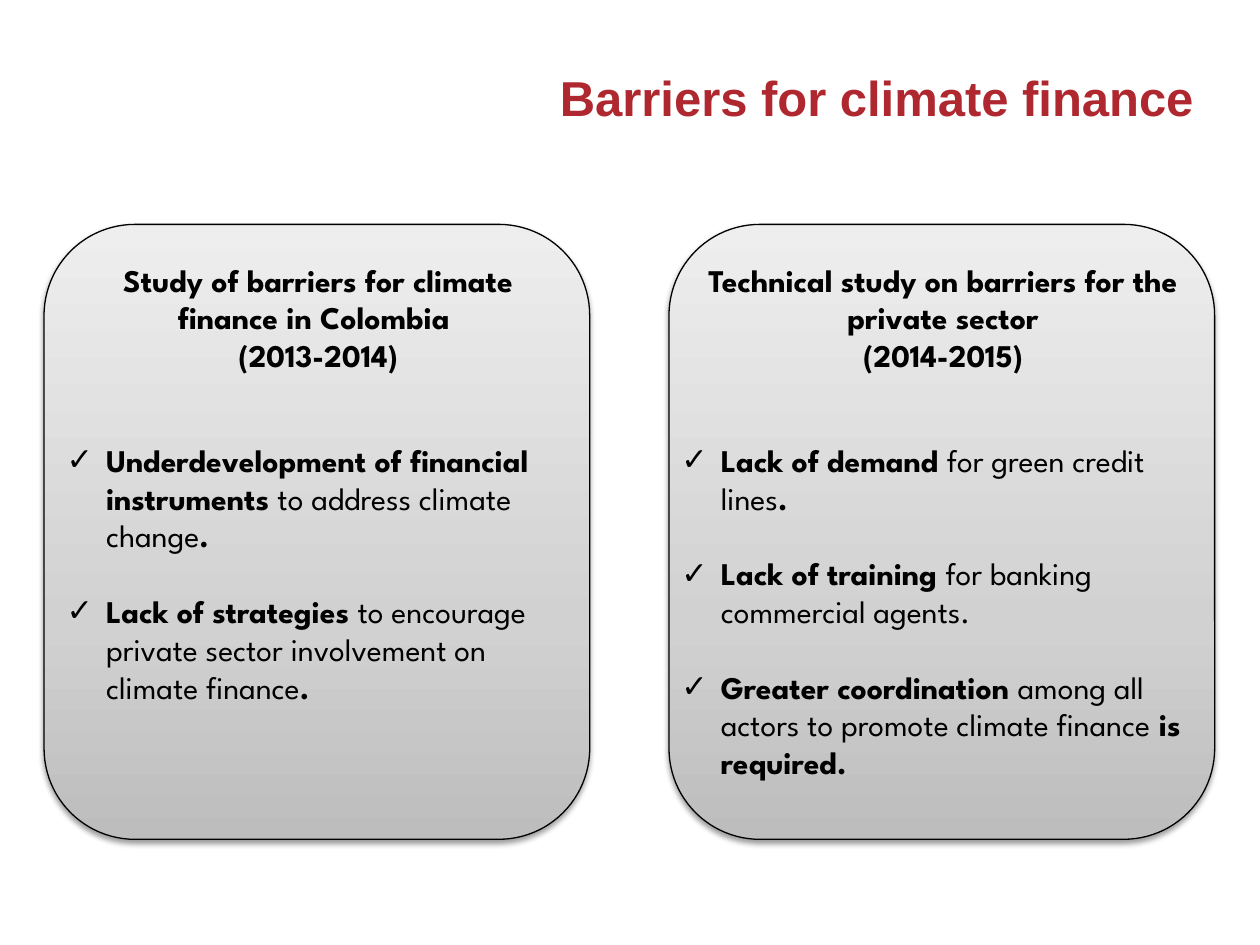
from copy import deepcopy

from lxml import etree
from pptx import Presentation
from pptx import util as u
from pptx.dml.color import RGBColor
from pptx.enum import shapes, text
from pptx.oxml.ns import qn

COLORS = {
    "title": "AF272F",
    "ink": "000000",
    "card_bottom": "BDBDBD",
    "card_middle": "D1D1D1",
    "card_top": "EEEEEE",
}


def rgb(name):
    return RGBColor.from_string(COLORS[name])


class SlideBuilder:
    title_font = "Arial"
    body_font = "League Spartan"
    body_size = 18
    indent = 22.5
    bullet_gap = 21.6

    def __init__(self, page):
        self.page = page

    def card(self, left, top, width, height):
        box = self.page.shapes.add_shape(
            shapes.MSO_SHAPE.ROUNDED_RECTANGLE,
            u.Pt(left), u.Pt(top), u.Pt(width), u.Pt(height))
        box.line.color.rgb = rgb("ink")
        box.line.width = u.Pt(0.75)

        # Three-stop gradient, running from the bottom edge to the top
        box.fill.gradient()
        box.fill.gradient_angle = 90
        stops = box._element.spPr.find(qn("a:gradFill")).find(qn("a:gsLst"))
        stops.insert(1, deepcopy(stops[0]))
        shades = (("card_bottom", 0), ("card_middle", 0.35), ("card_top", 1))
        for stop, (shade, position) in zip(box.fill.gradient_stops, shades):
            stop.color.rgb = rgb(shade)
            stop.position = position

        # Soft shadow below the card
        box.shadow.inherit = False
        effects = box._element.spPr.find(qn("a:effectLst"))
        shadow = etree.SubElement(
            effects, qn("a:outerShdw"), blurRad=str(u.Pt(3.1)),
            dist=str(u.Pt(1.6)), dir="5400000", rotWithShape="0")
        color = etree.SubElement(shadow, qn("a:srgbClr"), val=COLORS["ink"])
        etree.SubElement(color, qn("a:alpha"), val="38000")

    def text_frame(self, left, top, width, height):
        box = self.page.shapes.add_textbox(
            u.Pt(left), u.Pt(top), u.Pt(width), u.Pt(height))
        box.text_frame.word_wrap = True
        return box.text_frame

    def style(self, para, font, size, color, bold=None):
        para.font.name = font
        para.font.size = u.Pt(size)
        para.font.color.rgb = rgb(color)
        para.font.bold = bold

    def title(self, words, *place):
        frame = self.text_frame(*place)
        frame.vertical_anchor = text.MSO_ANCHOR.MIDDLE
        frame.margin_top, frame.margin_bottom = u.Pt(6), u.Pt(1)
        para = frame.paragraphs[0]
        para.text = words
        para.alignment = text.PP_ALIGN.RIGHT
        self.style(para, self.title_font, 28, "title", True)

    def heading(self, words, *place):
        para = self.text_frame(*place).paragraphs[0]
        para.text = words
        para.alignment = text.PP_ALIGN.CENTER
        self.style(para, self.body_font, self.body_size, "ink", True)

    def checklist(self, items, *place):
        frame = self.text_frame(*place)
        for index, spans in enumerate(items):
            para = frame.add_paragraph() if index else frame.paragraphs[0]
            if index:
                para.space_before = u.Pt(self.bullet_gap)
            props = para._p.get_or_add_pPr()
            props.set("marL", str(u.Pt(self.indent)))
            props.set("indent", str(-u.Pt(self.indent)))
            etree.SubElement(props, qn("a:buFont"), typeface="Arial")
            etree.SubElement(props, qn("a:buChar"), char="✓")
            self.style(para, self.body_font, self.body_size, "ink")
            # Spans alternate between bold and regular
            for number, words in enumerate(spans):
                span = para.add_run()
                span.text = words
                span.font.bold = number % 2 == 0


STUDIES = [
    {
        "heading": "Study of barriers for climate finance in Colombia \v(2013-2014)",
        "list_left": 31,
        "items": [
            ("Underdevelopment of financial instruments ",
             "to address climate change", "."),
            ("Lack of strategies ",
             "to encourage private sector involvement on climate finance", "."),
        ],
    },
    {
        "heading": "Technical study on barriers for the private sector\v(2014-2015)",
        "list_left": 382.3,
        "items": [
            ("Lack of demand ", "for green credit lines", "."),
            ("Lack of training ", "for banking commercial agents."),
            ("Greater coordination ",
             "among all actors to promote climate finance", " is required."),
        ],
    },
]


def main():
    deck = Presentation()
    deck.slide_width, deck.slide_height = u.Pt(720), u.Pt(540)
    slide = SlideBuilder(deck.slides.add_slide(deck.slide_layouts[6]))

    # Title
    slide.title("Barriers for climate finance", 231.8, 32.4, 457.2, 41)

    # One card per study
    card_left, card_pitch = 25.2, 357.1
    for column, study in enumerate(STUDIES):
        left = card_left + column * card_pitch
        slide.card(left, 128.2, 311.8, 351.4)
        slide.heading(study["heading"], left + 11.5, 145.4, 290.2, 72.7)
        slide.checklist(study["items"], study["list_left"], 248.4, 307, 205)

    deck.save("out.pptx")


if __name__ == "__main__":
    main()
